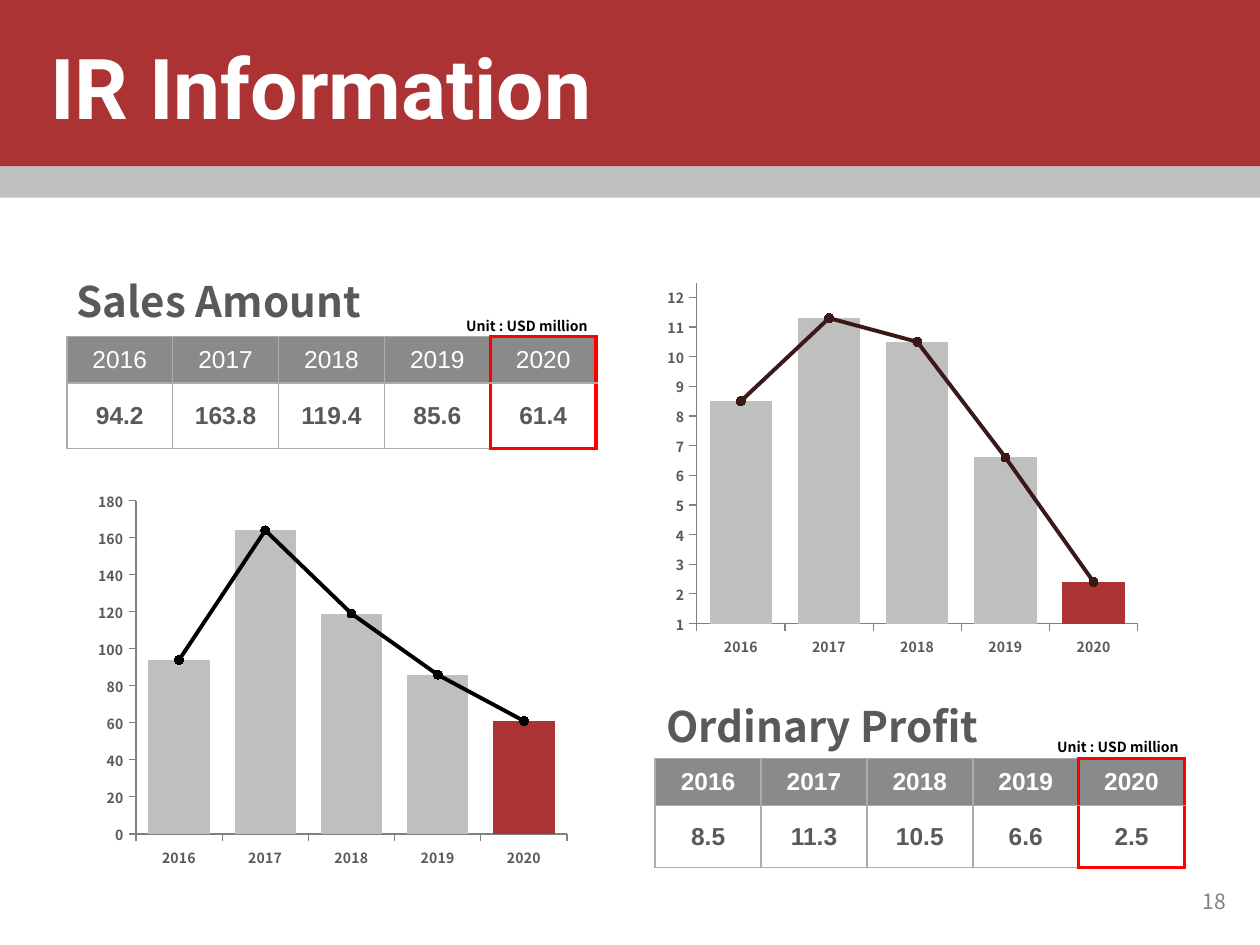
"""Builds the IR information slide with two tables and two combined charts."""
from dataclasses import dataclass

from lxml import etree
from pptx import Presentation
from pptx import util as u
from pptx.chart.data import CategoryChartData
from pptx.dml.color import RGBColor
from pptx.enum import chart as kinds, shapes, text
from pptx.oxml import ns


@dataclass(frozen=True)
class Theme:
    red: str = "AB3333"
    band: str = "C1C1C1"
    bar: str = "BFBFBF"
    axis: str = "808080"
    dark: str = "595959"
    grid: str = "AFABAB"
    alert: str = "FF0000"
    white: str = "FFFFFF"
    black: str = "000000"
    brown: str = "3B1919"
    body: str = "Noto Sans CJK KR"
    display: str = "Roboto"
    figures: str = "Arial"
    title: float = 48
    heading: float = 24
    cell: float = 14
    number: float = 12
    small: float = 8


class Builder:
    """Draws styled elements on the current page."""

    def __init__(self, theme, page):
        self.theme, self.page = theme, page

    def paint(self, fill, color):
        fill.solid()
        fill.fore_color.rgb = RGBColor.from_string(color)

    def style(self, font, size, color, bold=False, name=None):
        font.size, font.bold, font.name = u.Pt(size), bold, name or self.theme.body
        font.color.rgb = RGBColor.from_string(color)

    def stroke(self, line, color, width):
        self.paint(line.fill, color)
        line.width = u.Pt(width)

    def band(self, height, color):
        shape = self.page.shapes.add_shape(
            shapes.MSO_SHAPE.RECTANGLE, 0, 0, u.Pt(720), u.Pt(height))
        shape.shadow.inherit = False
        self.paint(shape.fill, color)
        shape.line.fill.background()

    def label(self, place, words, size, color, bold=True, name=None,
              align=text.PP_ALIGN.LEFT, anchor=text.MSO_ANCHOR.TOP, spacing=None):
        box = self.page.shapes.add_textbox(*map(u.Pt, place))
        frame = box.text_frame
        frame.word_wrap, frame.vertical_anchor = True, anchor
        para = frame.paragraphs[0]
        para.alignment, para.line_spacing = align, spacing
        span = para.add_run()
        span.text = words
        self.style(span.font, size, color, bold, name)

    def border(self, cell, side, marked):
        color, width = (self.theme.alert, 2.25) if marked else (self.theme.grid, 1)
        properties = cell._tc.get_or_add_tcPr()
        line = etree.SubElement(properties, ns.qn(f"a:ln{side}"), w=str(u.Pt(width)))
        fill = etree.SubElement(line, ns.qn("a:solidFill"))
        etree.SubElement(fill, ns.qn("a:srgbClr"), val=color)

    def table(self, left, top, heights, rows, bold_header):
        theme, last = self.theme, len(rows[0]) - 1
        grid = self.page.shapes.add_table(
            len(rows), last + 1, u.Pt(left), u.Pt(top),
            u.Pt(60.5 * (last + 1)), u.Pt(sum(heights))).table
        for column in grid.columns:
            column.width = u.Pt(60.5)
        for r, (height, values) in enumerate(zip(heights, rows)):
            grid.rows[r].height = u.Pt(height)
            header = r == 0
            for c, value in enumerate(values):
                cell, end = grid.cell(r, c), c == last
                cell.margin_left = cell.margin_right = u.Pt(4.3)
                cell.margin_top = cell.margin_bottom = u.Pt(2.9)
                cell.vertical_anchor = text.MSO_ANCHOR.MIDDLE
                marks = {"L": end, "R": c >= last - 1, "T": end and header,
                         "B": end and r == len(rows) - 1}
                for side, marked in marks.items():
                    self.border(cell, side, marked)
                self.paint(cell.fill, theme.dark if header else theme.white)
                if header:
                    fill = cell._tc.tcPr.find(ns.qn("a:solidFill"))
                    etree.SubElement(fill[0], ns.qn("a:alpha"), val="70000")
                para = cell.text_frame.paragraphs[0]
                para.alignment = text.PP_ALIGN.CENTER
                span = para.add_run()
                span.text = value
                self.style(span.font, theme.cell, theme.white if header else theme.dark,
                           bold_header or not header, theme.figures)

    def move_to_line(self, chart):
        bars = chart.plots[0]._element
        series = bars.findall(ns.qn("c:ser"))[1]
        for flag in series.findall(ns.qn("c:invertIfNegative")):
            series.remove(flag)
        lines = bars.makeelement(ns.qn("c:lineChart"))
        bars.addnext(lines)
        etree.SubElement(lines, ns.qn("c:grouping"), val="standard")
        etree.SubElement(lines, ns.qn("c:varyColors"), val="0")
        lines.append(series)
        etree.SubElement(lines, ns.qn("c:marker"), val="1")
        for axis in bars.findall(ns.qn("c:axId")):
            etree.SubElement(lines, ns.qn("c:axId"), val=axis.get("val"))

    def fix_plot(self, chart, fractions):
        area = chart._chartSpace.chart.plotArea
        for old in area.findall(ns.qn("c:layout")):
            area.remove(old)
        layout = area.makeelement(ns.qn("c:layout"))
        area.insert(0, layout)
        manual = etree.SubElement(layout, ns.qn("c:manualLayout"))
        settings = [("layoutTarget", "inner"), ("xMode", "edge"), ("yMode", "edge")]
        for key, value in settings + list(zip("xywh", fractions)):
            etree.SubElement(manual, ns.qn(f"c:{key}"), val=str(value))

    def chart(self, left, top, years, values, scale, fractions, color):
        theme = self.theme
        data = CategoryChartData()
        data.categories = years
        for name in ("Series 1", "Series 2"):
            data.add_series(name, values)
        chart = self.page.shapes.add_chart(
            kinds.XL_CHART_TYPE.COLUMN_CLUSTERED, u.Pt(left), u.Pt(top),
            u.Pt(280), u.Pt(224), data).chart
        chart.has_legend = chart.has_title = False
        self.style(chart.font, theme.small, theme.dark, True)
        self.move_to_line(chart)
        self.fix_plot(chart, fractions)
        bars, lines = chart.plots
        bars.gap_width, bars.vary_by_categories = 41, False
        self.paint(bars.series[0].format.fill, theme.bar)
        self.paint(bars.series[0].points[len(values) - 1].format.fill, theme.red)
        trend = lines.series[0]
        trend.smooth = False
        self.stroke(trend.format.line, color, 2.25)
        trend.marker.style, trend.marker.size = kinds.XL_MARKER_STYLE.CIRCLE, 5
        self.paint(trend.marker.format.fill, theme.black)
        self.stroke(trend.marker.format.line, color, 0.75)
        for axis in (chart.category_axis, chart.value_axis):
            axis.has_major_gridlines = False
            axis.major_tick_mark = kinds.XL_TICK_MARK.OUTSIDE
            axis.minor_tick_mark = kinds.XL_TICK_MARK.NONE
            self.style(axis.tick_labels.font, theme.small, theme.dark, True)
            self.stroke(axis.format.line, theme.axis, 0.75)
        axis = chart.value_axis
        axis.minimum_scale, axis.maximum_scale, axis.major_unit = scale


def main():
    deck = Presentation()
    deck.slide_width, deck.slide_height = u.Pt(720), u.Pt(540)
    theme = Theme()
    draw = Builder(theme, deck.slides.add_slide(deck.slide_layouts[6]))
    years = ["2016", "2017", "2018", "2019", "2020"]
    right = text.PP_ALIGN.RIGHT

    draw.band(113, theme.band)
    draw.band(95, theme.red)
    draw.label((21.6, 23, 403, 60), "IR Information", theme.title, theme.white,
               name=theme.display, spacing=0.9)
    draw.label((656.6, 500.4, 51.1, 28.8), "18", theme.number, theme.axis, bold=False,
               align=right, anchor=text.MSO_ANCHOR.MIDDLE)

    draw.chart(49.7, 275, years, [94, 164, 119, 86, 61], (0, 180, 20),
               (0.1, 0.05, 0.88, 0.85), theme.black)
    draw.chart(375.8, 157, years, [8.5, 11.3, 10.5, 6.6, 2.4], (1, 12.5, 1),
               (0.08, 0.02, 0.9, 0.87), theme.brown)

    draw.label((36.7, 154, 186.5, 36), "Sales Amount", theme.heading, theme.dark)
    draw.label((373.7, 396.7, 286, 36), "Ordinary Profit", theme.heading, theme.dark)
    draw.table(38.2, 192.2, (26.6, 37.4),
               [years, ["94.2", "163.8", "119.4", "85.6", "61.4"]], False)
    draw.table(374.4, 433.4, (26.9, 35.5),
               [years, ["8.5", "11.3", "10.5", "6.6", "2.5"]], True)
    for left, top in ((240.5, 177.8), (578.2, 418.3)):
        draw.label((left, top, 104.4, 17.3), "Unit : USD million ", theme.small,
                   theme.black, align=right)
    deck.save("out.pptx")


if __name__ == "__main__":
    main()
